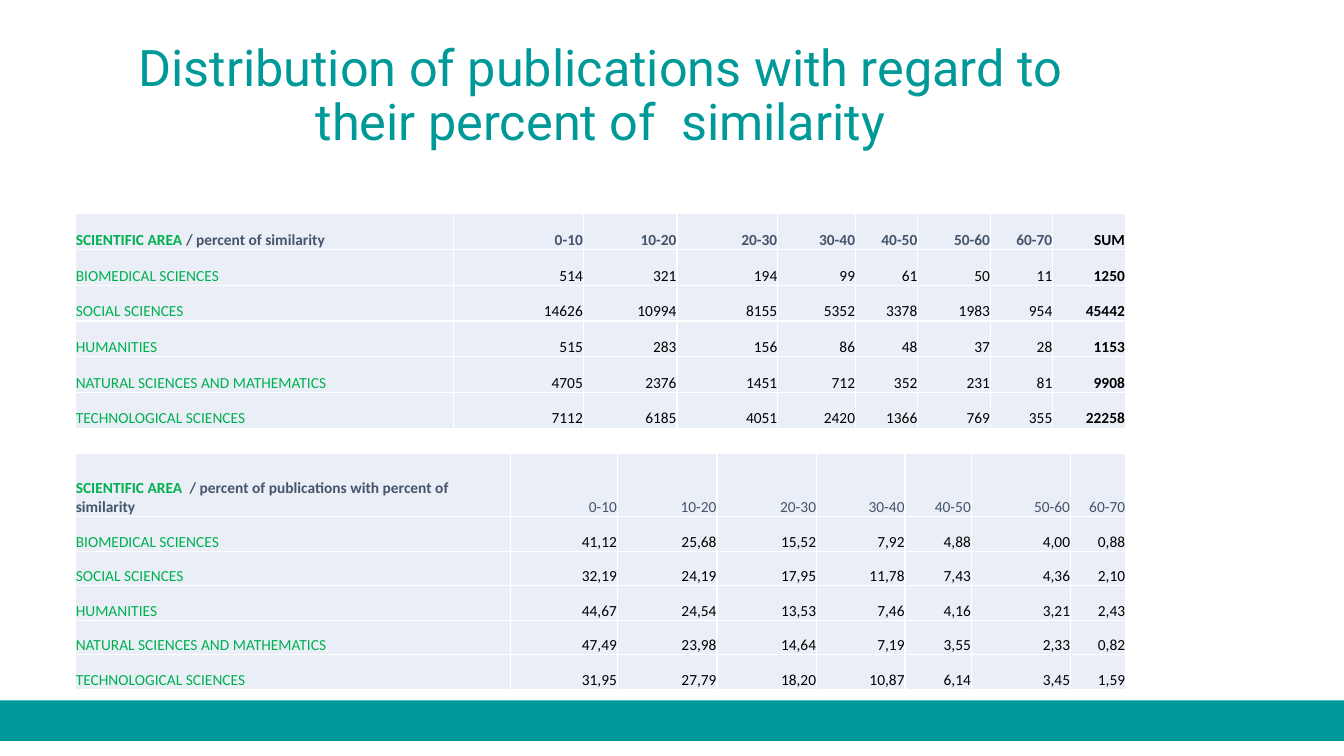
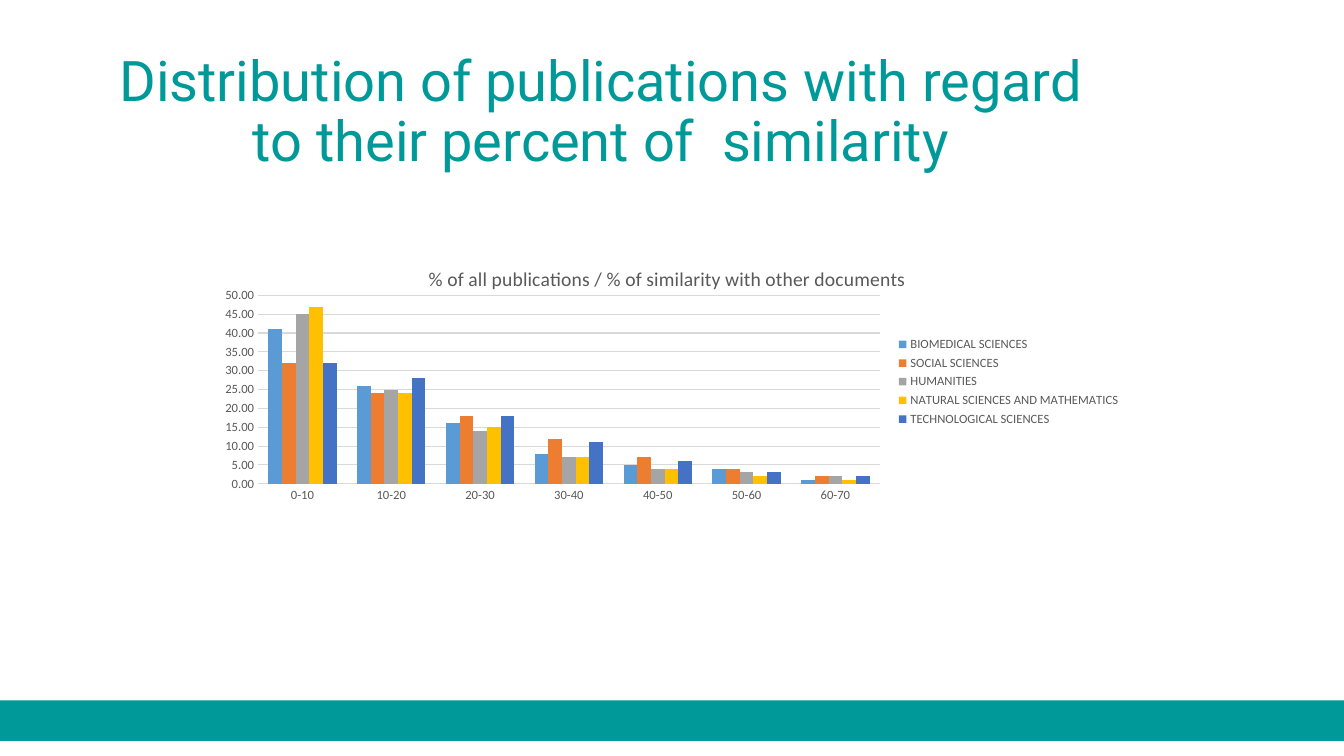
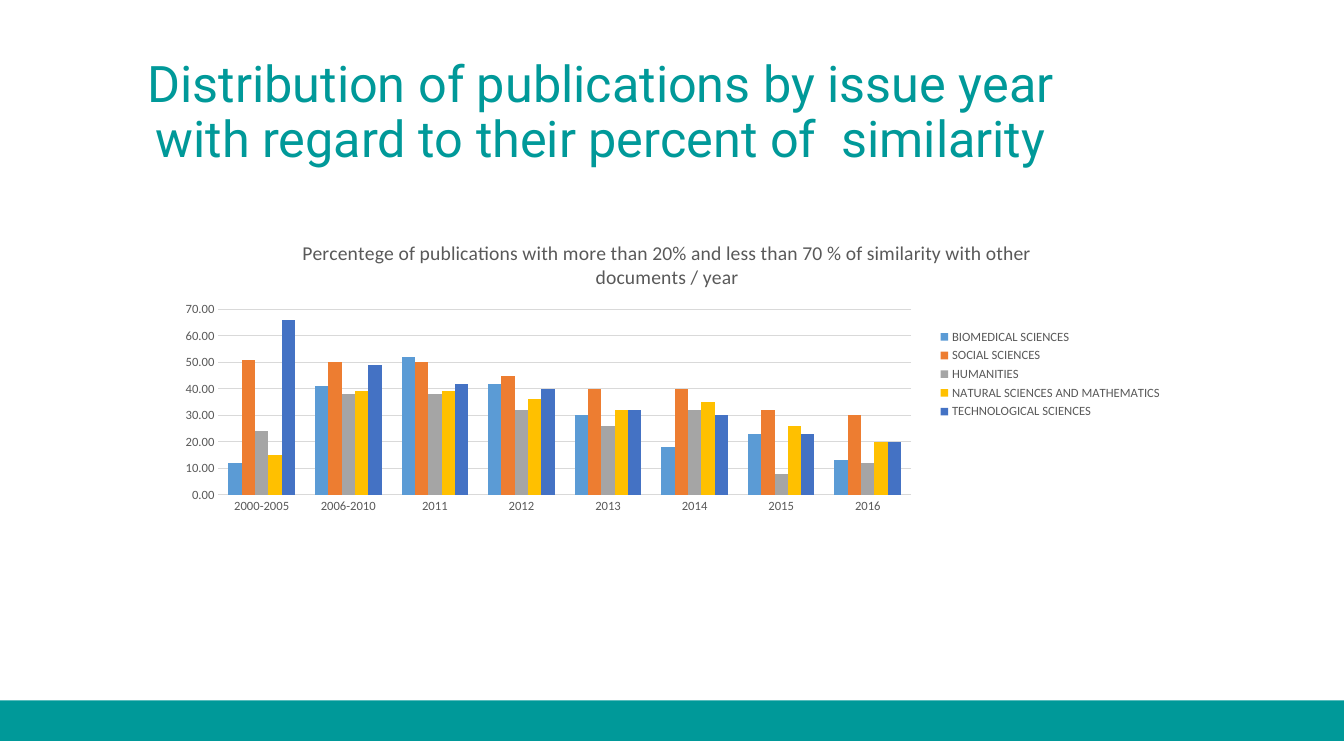
from lxml.etree import SubElement
from pptx import Presentation
from pptx.chart.data import CategoryChartData
from pptx.dml.color import RGBColor
from pptx.enum.chart import XL_CHART_TYPE, XL_LEGEND_POSITION, XL_TICK_MARK
from pptx.enum.shapes import MSO_SHAPE
from pptx.enum.text import MSO_ANCHOR, MSO_AUTO_SIZE, PP_ALIGN
from pptx.oxml import parse_xml
from pptx.oxml.ns import nsdecls, qn
from pptx.util import Cm, Pt

TEAL = "009999"
GREEN = "00B050"
SLATE = "44546A"
GREY = "595959"
RULE = "D9D9D9"
BLACK = "000000"
WHITE = "FFFFFF"
CELL = "EAEFF7"
SERIES_COLORS = ["5B9BD5", "ED7D31", "A5A5A5", "FFC000", "4472C4"]

TITLE_FONT = "Roboto"
BODY_FONT = "Calibri"
WIDTH, HEIGHT = 33.87, 19.05
TABLE_LEFT = 1.9

AREAS = [
    "BIOMEDICAL SCIENCES",
    "SOCIAL SCIENCES",
    "HUMANITIES",
    "NATURAL SCIENCES AND MATHEMATICS",
    "TECHNOLOGICAL SCIENCES",
]
RANGES = ["0-10", "10-20", "20-30", "30-40", "40-50", "50-60", "60-70"]
COUNTS = [
    ["514", "321", "194", "99", "61", "50", "11", "1250"],
    ["14626", "10994", "8155", "5352", "3378", "1983", "954", "45442"],
    ["515", "283", "156", "86", "48", "37", "28", "1153"],
    ["4705", "2376", "1451", "712", "352", "231", "81", "9908"],
    ["7112", "6185", "4051", "2420", "1366", "769", "355", "22258"],
]
SHARES = [
    ["41,12", "25,68", "15,52", "7,92", "4,88", "4,00", "0,88"],
    ["32,19", "24,19", "17,95", "11,78", "7,43", "4,36", "2,10"],
    ["44,67", "24,54", "13,53", "7,46", "4,16", "3,21", "2,43"],
    ["47,49", "23,98", "14,64", "7,19", "3,55", "2,33", "0,82"],
    ["31,95", "27,79", "18,20", "10,87", "6,14", "3,45", "1,59"],
]
YEARS = ["2000-2005", "2006-2010", "2011", "2012", "2013", "2014", "2015", "2016"]
YEAR_SHARES = [
    [12, 41, 52, 42, 30, 18, 23, 13],
    [51, 50, 50, 45, 40, 40, 32, 30],
    [24, 38, 38, 32, 26, 32, 8, 12],
    [15, 39, 39, 36, 32, 35, 26, 20],
    [66, 49, 42, 40, 32, 30, 23, 20],
]


def color(value):
    return RGBColor.from_string(value)


def set_fill(target, value):
    target.fill.solid()
    target.fill.fore_color.rgb = color(value)


def style_font(font, size, value, name=BODY_FONT, bold=False):
    font.size = Pt(size)
    font.name = name
    font.bold = bold
    font.color.rgb = color(value)


def place(sp, left, top, width, height):
    sp.left, sp.top, sp.width, sp.height = Cm(left), Cm(top), Cm(width), Cm(height)


def add_master_band(prs, s):
    band = s.shapes.add_shape(
        MSO_SHAPE.RECTANGLE, 0, Cm(17.65), prs.slide_width, Cm(1.02)
    )
    band.shadow.inherit = False
    set_fill(band, TEAL)
    band.line.fill.background()
    prs.slide_master.shapes.element.insert(2, band.element)


def add_title(s, text, size, box=(2.34, 1.02, 25.6, 3.68), inset=None):
    sp = s.shapes.title
    place(sp, *box)
    tf = sp.text_frame
    tf.text = text
    tf.word_wrap = True
    tf.auto_size = MSO_AUTO_SIZE.NONE
    tf.vertical_anchor = MSO_ANCHOR.MIDDLE
    if inset is not None:
        tf.margin_left = tf.margin_right = Cm(inset)
        tf.margin_top = tf.margin_bottom = Cm(inset)
    p = tf.paragraphs[0]
    p.alignment = PP_ALIGN.CENTER
    p.line_spacing = 0.9
    for r in p.runs:
        style_font(r.font, size, TEAL, TITLE_FONT)
    return sp


def add_borders(cell):
    props = cell._tc.get_or_add_tcPr()
    for side in ("a:lnL", "a:lnR", "a:lnT", "a:lnB"):
        line = SubElement(props, qn(side), w=str(Pt(1)))
        fill = SubElement(line, qn("a:solidFill"))
        SubElement(fill, qn("a:srgbClr"), val=WHITE)


def fill_cell(cell, runs, align=PP_ALIGN.RIGHT):
    add_borders(cell)
    set_fill(cell, CELL)
    cell.vertical_anchor = MSO_ANCHOR.BOTTOM
    cell.margin_left = cell.margin_right = cell.margin_top = Cm(0.01)
    cell.margin_bottom = 0
    p = cell.text_frame.paragraphs[0]
    p.alignment = align
    for text, value, bold in runs:
        r = p.add_run()
        r.text = text
        style_font(r.font, 11, value, bold=bold)


def add_area_table(s, top, widths, heights, corner, header, values, sum_column=None):
    table = s.shapes.add_table(
        len(heights), len(widths), Cm(TABLE_LEFT), Cm(top),
        Cm(sum(widths)), Cm(sum(heights)),
    ).table
    table.first_row = False
    table.horz_banding = False
    for column, width in zip(table.columns, widths):
        column.width = Cm(width)
    for row, height in zip(table.rows, heights):
        row.height = Cm(height)
    fill_cell(table.cell(0, 0), corner, PP_ALIGN.LEFT)
    for j, run in enumerate(header, 1):
        fill_cell(table.cell(0, j), [run])
    for i, (area, numbers) in enumerate(zip(AREAS, values), 1):
        fill_cell(table.cell(i, 0), [(area, GREEN, False)], PP_ALIGN.LEFT)
        for j, number in enumerate(numbers, 1):
            fill_cell(table.cell(i, j), [(number, BLACK, j == sum_column)])


def set_layout(parent, inner=False, **fractions):
    layout = parent.find(qn("c:layout"))
    if layout is None:
        layout = parse_xml(f"<c:layout {nsdecls('c')}/>")
        parent.insert(0, layout)
    manual = SubElement(layout, qn("c:manualLayout"))
    if inner:
        SubElement(manual, qn("c:layoutTarget"), val="inner")
    for mode in ("c:xMode", "c:yMode"):
        SubElement(manual, qn(mode), val="edge")
    for key, value in fractions.items():
        SubElement(manual, qn(f"c:{key}"), val=str(value))


def style_axes(chart, top_value, step):
    for axis in (chart.category_axis, chart.value_axis):
        axis.major_tick_mark = axis.minor_tick_mark = XL_TICK_MARK.NONE
        style_font(axis.tick_labels.font, 9, GREY)
    line = chart.category_axis.format.line
    line.color.rgb = color(RULE)
    line.width = Pt(0.75)
    axis = chart.value_axis
    axis.minimum_scale, axis.maximum_scale, axis.major_unit = 0, top_value, step
    axis.tick_labels.number_format = "0.00"
    axis.tick_labels.number_format_is_linked = False
    axis.format.line.fill.background()
    axis.has_major_gridlines = True
    grid = axis.major_gridlines.format.line
    grid.color.rgb = color(RULE)
    grid.width = Pt(0.75)


def add_area_chart(s, box, title, title_at, plot_box, categories, values, scale):
    data = CategoryChartData(number_format="0.00")
    data.categories = categories
    for area, numbers in zip(AREAS, values):
        data.add_series(area, numbers)
    chart = s.shapes.add_chart(
        XL_CHART_TYPE.COLUMN_CLUSTERED, *[Cm(v) for v in box], data
    ).chart
    style_font(chart.font, 10, BLACK)
    chart.has_title = True
    tf = chart.chart_title.text_frame
    tf.text = title
    style_font(tf.paragraphs[0].runs[0].font, 14, GREY)
    set_layout(chart.chart_title.element, x=title_at[0], y=title_at[1])
    x, y, w, h = plot_box
    plot_area = chart.element.find(".//" + qn("c:plotArea"))
    set_layout(plot_area, inner=True, x=x, y=y, w=w, h=h)
    chart.has_legend = True
    chart.legend.position = XL_LEGEND_POSITION.RIGHT
    chart.legend.include_in_layout = False
    style_font(chart.legend.font, 9, GREY)
    plot = chart.plots[0]
    plot.gap_width = 150
    plot.overlap = 0
    plot.vary_by_categories = False
    for series, value in zip(plot.series, SERIES_COLORS):
        set_fill(series.format, value)
    style_axes(chart, *scale)


def add_table_slide(s):
    title = add_title(
        s,
        "Distribution of publications with regard to\vtheir percent of  similarity",
        36, (TABLE_LEFT, 1.07, 26.47, 2.77), 0,
    )
    set_fill(title, WHITE)
    add_area_table(
        s, 5.38,
        [9.52, 3.28, 2.36, 2.54, 1.96, 1.57, 1.83, 1.57, 1.83],
        [0.91] + [0.9] * 5,
        [("SCIENTIFIC AREA ", GREEN, True), ("/ percent of similarity", SLATE, True)],
        [(text, SLATE, True) for text in RANGES] + [("SUM", BLACK, True)],
        COUNTS, sum_column=8,
    )
    add_area_table(
        s, 11.42,
        [10.97, 2.69, 2.51, 2.51, 2.23, 1.67, 2.5, 1.39],
        [1.6] + [0.87] * 5,
        [
            ("SCIENTIFIC AREA  ", GREEN, True),
            ("/ percent of publications with percent of similarity", SLATE, True),
        ],
        [(text, SLATE, False) for text in RANGES],
        SHARES,
    )


def add_similarity_slide(s):
    add_title(
        s, "Distribution of publications with regard to their percent of  similarity", 40
    )
    add_area_chart(
        s, (5.1, 6.32, 23.39, 6.6),
        "% of all publications / % of similarity with other documents",
        (0.24, 0.04), (0.06, 0.17, 0.67, 0.72),
        RANGES,
        [[round(float(v.replace(",", "."))) for v in row] for row in SHARES],
        (50, 5),
    )


def add_year_slide(s):
    add_title(
        s,
        "Distribution of publications by issue year with regard to "
        "their percent of  similarity",
        36,
    )
    add_area_chart(
        s, (4.24, 5.72, 25.3, 7.42),
        "Percentege of publications with more than 20% and less than 70 % "
        "of similarity with other documents / year",
        (0.13, 0.03), (0.05, 0.28, 0.69, 0.63),
        YEARS, YEAR_SHARES, (70, 10),
    )


def main():
    prs = Presentation()
    prs.slide_width, prs.slide_height = Cm(WIDTH), Cm(HEIGHT)
    layout = prs.slide_layouts.get_by_name("Title Only")
    slides = [prs.slides.add_slide(layout) for _ in range(3)]
    add_master_band(prs, slides[0])
    for build, s in zip((add_table_slide, add_similarity_slide, add_year_slide), slides):
        build(s)
    prs.save("out.pptx")


if __name__ == "__main__":
    main()
